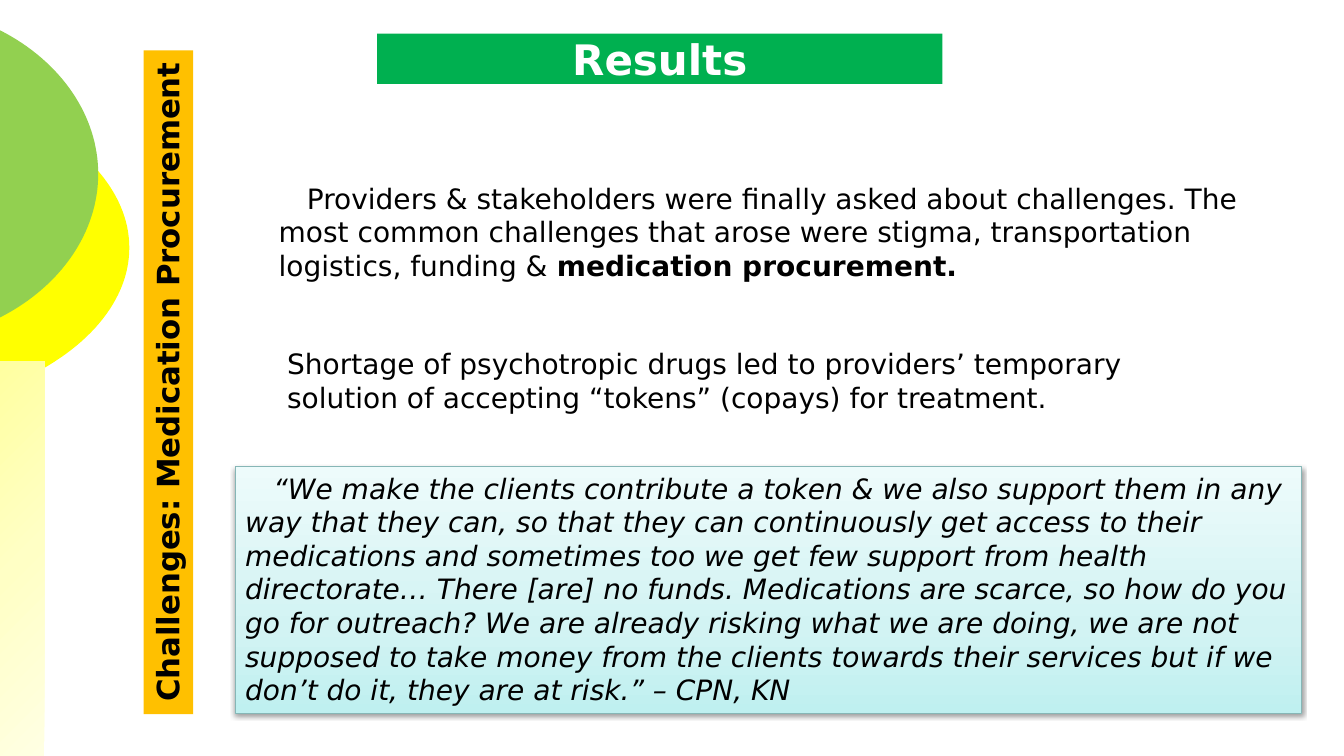
from collections import namedtuple

from lxml import etree
from pptx import Presentation, util as u
from pptx.dml.color import RGBColor
from pptx.enum import shapes, text
from pptx.oxml import ns

Box = namedtuple("Box", "left top width height")

COLUMNS, ROWS = 160, 90
SLIDE_WIDTH, SLIDE_HEIGHT = u.Inches(13.333), u.Inches(7.5)
FONT = "DejaVu Sans"
BODY_SIZE = 20
FIRST_LINE_INDENT = u.Inches(0.28)

BLACK = RGBColor(0x00, 0x00, 0x00)
WHITE = RGBColor(0xFF, 0xFF, 0xFF)
YELLOW = RGBColor(0xFF, 0xFF, 0x00)
LEAF = RGBColor(0x92, 0xD0, 0x50)
GREEN = RGBColor(0x00, 0xB0, 0x50)
AMBER = RGBColor(0xFF, 0xC0, 0x00)
TEAL = RGBColor(0x86, 0xB6, 0xB6)
CREAM_STOPS = (
    (0, RGBColor(0xFF, 0xFF, 0xA0)),
    (50, RGBColor(0xFF, 0xFF, 0xC5)),
    (100, RGBColor(0xFF, 0xFF, 0xE3)),
)
AQUA_STOPS = (
    (0, RGBColor(0xBF, 0xF0, 0xF0)),
    (35, RGBColor(0xD2, 0xF3, 0xF3)),
    (100, RGBColor(0xED, 0xFB, 0xFB)),
)


def grid(left, top, width, height):
    column, row = SLIDE_WIDTH / COLUMNS, SLIDE_HEIGHT / ROWS
    return Box(round(left * column), round(top * row),
               round(width * column), round(height * row))


def place(shape, box):
    shape.left, shape.top, shape.width, shape.height = box


def add_element(parent, tag, **attributes):
    values = {name: str(value) for name, value in attributes.items()}
    return etree.SubElement(parent, ns.qn(tag), values)


def fill_solid(shape, color):
    shape.fill.solid()
    shape.fill.fore_color.rgb = color


def fill_gradient(shape, stops):
    shape.fill.gradient()
    gradient = shape.element.spPr.find(ns.qn("a:gradFill"))
    for child in list(gradient):
        gradient.remove(child)
    stop_list = add_element(gradient, "a:gsLst")
    for position, color in stops:
        stop = add_element(stop_list, "a:gs", pos=position * 1000)
        add_element(stop, "a:srgbClr", val=color)
    return gradient


def style_runs(para, size, color, bold=None, italic=None):
    for span in para.runs:
        font = span.font
        font.name, font.size = FONT, u.Pt(size)
        font.bold, font.italic = bold, italic
        font.color.rgb = color


def indent_first_line(para):
    properties = para._p.get_or_add_pPr()
    properties.set("marL", "0")
    properties.set("indent", str(FIRST_LINE_INDENT))


def add_half_oval(page, box, color, steps=32):
    curve = ((0, 0), (0.63, 0.11), (1, 0.3), (1, 0.5))
    upper = []
    for step in range(steps + 1):
        t = step / steps
        weights = ((1 - t) ** 3, 3 * t * (1 - t) ** 2, 3 * t * t * (1 - t), t ** 3)
        upper.append(tuple(sum(w * point[axis] for w, point in zip(weights, curve))
                           for axis in (0, 1)))
    lower = [(x, 1 - y) for x, y in reversed(upper[:-1])]
    outline = [(round(box.left + x * box.width), round(box.top + y * box.height))
               for x, y in upper + lower]
    builder = page.shapes.build_freeform(*outline[0])
    builder.add_line_segments(outline[1:], close=True)
    oval = builder.convert_to_shape()
    oval.shadow.inherit = False
    fill_solid(oval, color)
    oval.line.fill.background()


def add_side_panel(page, box):
    panel = page.shapes.add_shape(shapes.MSO_SHAPE.RECTANGLE, *box)
    panel.shadow.inherit = False
    panel.line.fill.background()
    gradient = fill_gradient(panel, CREAM_STOPS)
    circle = add_element(gradient, "a:path", path="circle")
    add_element(circle, "a:fillToRect", r=100000, b=100000)


def set_title(page, box):
    title = page.shapes.title
    place(title, box)
    fill_solid(title, GREEN)
    frame = title.text_frame
    frame.text = "Results"
    frame.auto_size = text.MSO_AUTO_SIZE.NONE
    frame.vertical_anchor = text.MSO_ANCHOR.MIDDLE
    frame.margin_left = frame.margin_right = u.Inches(0.07)
    frame.margin_top = frame.margin_bottom = u.Inches(0.04)
    para = frame.paragraphs[0]
    para.alignment = text.PP_ALIGN.CENTER
    style_runs(para, 30, WHITE, bold=True)


def set_vertical_heading(page, box):
    heading = page.placeholders[1]
    shift = (box.height - box.width) // 2
    place(heading, Box(box.left - shift, box.top + shift, box.height, box.width))
    heading.rotation = 270
    fill_solid(heading, AMBER)
    frame = heading.text_frame
    frame.text = "Challenges: Medication Procurement"
    frame.auto_size = text.MSO_AUTO_SIZE.NONE
    frame.vertical_anchor = text.MSO_ANCHOR.TOP
    para = frame.paragraphs[0]
    properties = para._p.get_or_add_pPr()
    properties.set("marL", "0")
    properties.set("indent", "0")
    add_element(properties, "a:buNone")
    para.alignment = text.PP_ALIGN.CENTER
    para.space_before = u.Pt(0)
    style_runs(para, 22, BLACK, bold=True)


def add_statement(page, box, plain, strong="", indented=False):
    frame = page.shapes.add_textbox(*box).text_frame
    frame.word_wrap = True
    frame.text = plain
    para = frame.paragraphs[0]
    if indented:
        indent_first_line(para)
    if strong:
        para.add_run().text = strong
    style_runs(para, BODY_SIZE, BLACK)
    if strong:
        para.runs[-1].font.bold = True


def add_quote(page, box, words):
    quote = page.shapes.add_shape(shapes.MSO_SHAPE.RECTANGLE, *box)
    gradient = fill_gradient(quote, AQUA_STOPS)
    add_element(gradient, "a:lin", ang=270 * 60000, scaled=1)
    quote.line.color.rgb = TEAL
    quote.line.width = u.Pt(0.75)
    quote.shadow.inherit = False
    effects = quote.element.spPr.find(ns.qn("a:effectLst"))
    shadow = add_element(effects, "a:outerShdw", blurRad=u.Pt(3.1),
                         dist=u.Pt(1.6), dir=90 * 60000, rotWithShape=0)
    shade = add_element(shadow, "a:srgbClr", val=BLACK)
    add_element(shade, "a:alpha", val=38000)
    frame = quote.text_frame
    frame.word_wrap = True
    frame.vertical_anchor = text.MSO_ANCHOR.TOP
    frame.text = words
    para = frame.paragraphs[0]
    para.alignment = text.PP_ALIGN.LEFT
    indent_first_line(para)
    style_runs(para, BODY_SIZE, BLACK, italic=True)


def main():
    deck = Presentation()
    deck.slide_width, deck.slide_height = SLIDE_WIDTH, SLIDE_HEIGHT
    page = deck.slides.add_slide(deck.slide_layouts[1])
    add_half_oval(page, grid(0, 12.7, 15.4, 33.6), YELLOW)
    add_half_oval(page, grid(0, 3.6, 11.7, 34.2), LEAF)
    add_side_panel(page, grid(0, 43, 5.3, 47))
    set_title(page, grid(44.9, 4, 67.3, 6))
    set_vertical_heading(page, grid(17.1, 6, 5.9, 79))
    add_statement(page, grid(32, 21, 118, 13.3),
                  "Providers & stakeholders were finally asked about challenges. The most common challenges that arose were stigma, transportation logistics, funding & ",
                  "medication procurement.", indented=True)
    add_statement(page, grid(33, 40.7, 116, 9.2),
                  "Shortage of psychotropic drugs led to providers’ temporary solution of accepting “tokens” (copays) for treatment.")
    add_quote(page, grid(28, 55.5, 127, 29.5),
              "“We make the clients contribute a token & we also support them in any way that they can, so that they can continuously get access to their medications and sometimes too we get few support from health directorate… There [are] no funds. Medications are scarce, so how do you go for outreach? We are already risking what we are doing, we are not supposed to take money from the clients towards their services but if we don’t do it, they are at risk.” – CPN, KN")
    deck.save("out.pptx")


if __name__ == "__main__":
    main()
